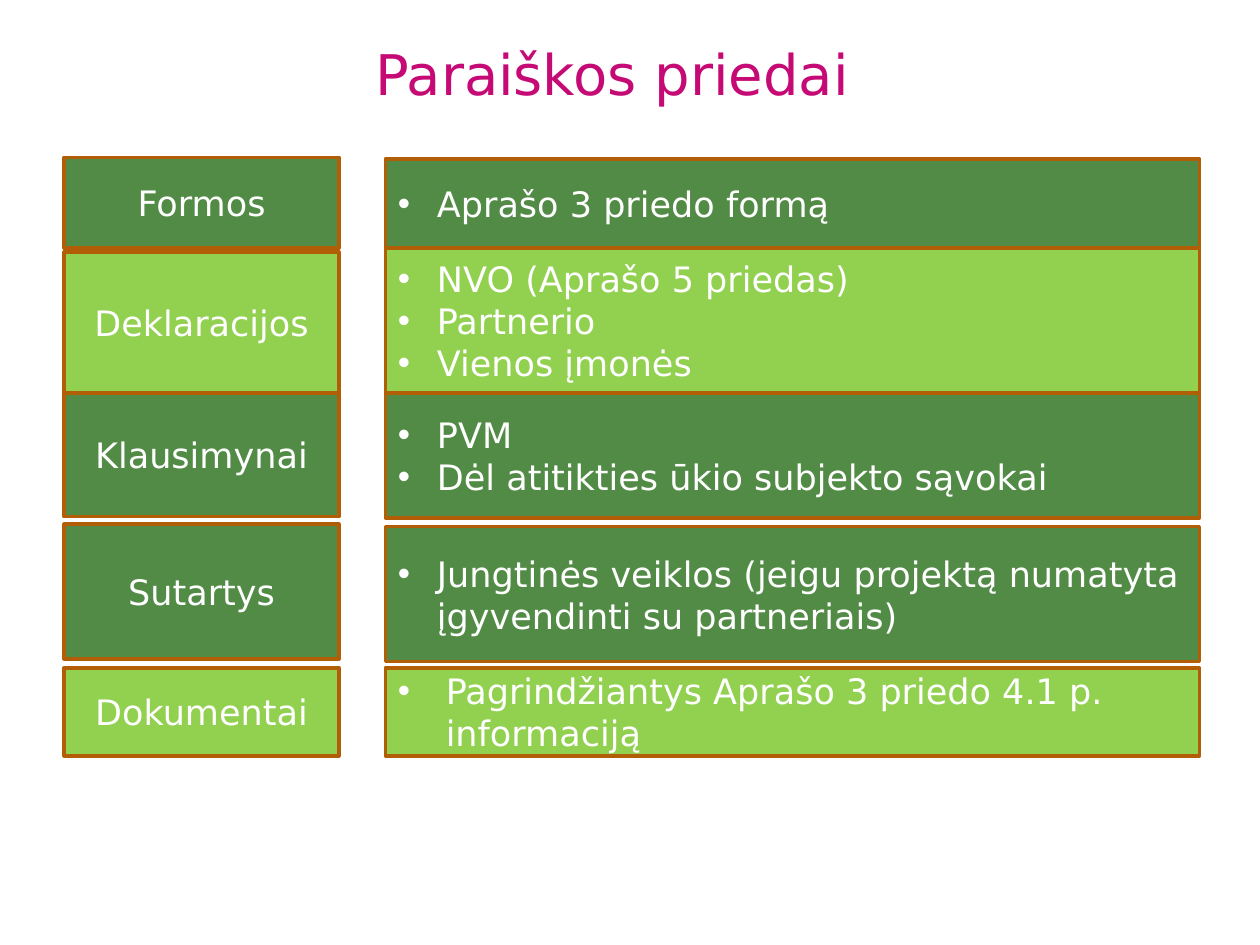
"""Build the slide listing the annexes of an application."""
from dataclasses import dataclass

from lxml.etree import SubElement
from pptx import Presentation
from pptx.dml.color import RGBColor
from pptx.enum.shapes import MSO_SHAPE as Preset
from pptx.enum.text import MSO_ANCHOR as Anchor, MSO_AUTO_SIZE as AutoSize, PP_ALIGN as Align
from pptx.oxml.ns import qn
from pptx.util import Inches, Pt

FONT = "DejaVu Sans"
COLORS = {
    "title": "C60A75",
    "dark": "528B45",
    "light": "92D050",
    "border": "B25E07",
    "text": "FFFFFF",
}
WIDTH, HEIGHT = Inches(10), Inches(7.5)
COLUMNS, ROWS = 100, 75


@dataclass(frozen=True)
class Span:
    """A start and a size in grid units."""
    start: float
    size: float


@dataclass(frozen=True)
class Annex:
    """A labelled group of annexes with the rows of its two boxes."""
    label: str
    items: tuple[str, ...]
    color: str
    label_rows: Span
    item_rows: Span
    indent: float = 0.31


LABEL_COLUMNS = Span(5.1, 21.8)
ITEM_COLUMNS = Span(30.6, 64.6)
TITLE_COLUMNS, TITLE_ROWS = Span(3.5, 90.2), Span(2.2, 9.2)

ANNEXES = (
    Annex("Formos", ("Aprašo 3 priedo formą",), "dark",
          Span(12.5, 7.2), Span(12.6, 7.1)),
    Annex("Deklaracijos", ("NVO (Aprašo 5 priedas)", "Partnerio", "Vienos įmonės"), "light",
          Span(20, 11.2), Span(19.7, 11.5)),
    Annex("Klausimynai", ("PVM", "Dėl atitikties ūkio subjekto sąvokai"), "dark",
          Span(31.2, 9.8), Span(31.2, 9.9)),
    Annex("Sutartys", ("Jungtinės veiklos (jeigu projektą numatyta įgyvendinti su partneriais)",),
          "dark", Span(41.6, 10.7), Span(41.8, 10.7)),
    Annex("Dokumentai", ("Pagrindžiantys Aprašo 3 priedo 4.1 p. informaciją",), "light",
          Span(53, 7), Span(53, 7), indent=0.38),
)


def grid_box(columns: Span, rows: Span) -> tuple[int, int, int, int]:
    """Return left, top, width and height of a grid area."""
    return (
        round(WIDTH * columns.start / COLUMNS),
        round(HEIGHT * rows.start / ROWS),
        round(WIDTH * columns.size / COLUMNS),
        round(HEIGHT * rows.size / ROWS),
    )


def rgb(name: str) -> RGBColor:
    """Return a named colour."""
    return RGBColor.from_string(COLORS[name])


def format_text(paragraph, size: float, color: str, align: Align) -> None:
    """Set alignment of a paragraph and the font of its runs."""
    paragraph.alignment = align
    for run in paragraph.runs:
        run.font.name = FONT
        run.font.size = Pt(size)
        run.font.color.rgb = rgb(color)


def add_bullet(paragraph, indent: float) -> None:
    """Give a paragraph a round bullet with a hanging indent."""
    properties = paragraph._p.get_or_add_pPr()
    properties.set("marL", str(Inches(indent)))
    properties.set("indent", str(-Inches(indent)))
    SubElement(properties, qn("a:buFont"), typeface="Arial")
    SubElement(properties, qn("a:buChar"), char="•")


def add_box(slide, columns: Span, rows: Span, color: str, text: str, align: Align):
    """Draw a bordered box with text and return its text frame."""
    shape = slide.shapes.add_shape(Preset.RECTANGLE, *grid_box(columns, rows))
    shape.shadow.inherit = False
    shape.fill.solid()
    shape.fill.fore_color.rgb = rgb(color)
    shape.line.color.rgb = rgb("border")
    shape.line.width = Pt(2)
    text_frame = shape.text_frame
    text_frame.word_wrap = True
    text_frame.vertical_anchor = Anchor.MIDDLE
    text_frame.text = text
    for paragraph in text_frame.paragraphs:
        format_text(paragraph, 20, "text", align)
    return text_frame


def add_annex(slide, annex: Annex) -> None:
    """Draw the label box and the list box of an annex."""
    add_box(slide, LABEL_COLUMNS, annex.label_rows, annex.color, annex.label, Align.CENTER)
    text_frame = add_box(slide, ITEM_COLUMNS, annex.item_rows, annex.color,
                         "\n".join(annex.items), Align.LEFT)
    for paragraph in text_frame.paragraphs:
        add_bullet(paragraph, annex.indent)


def set_title(slide, text: str) -> None:
    """Place and format the slide title."""
    title = slide.shapes.title
    title.left, title.top, title.width, title.height = grid_box(TITLE_COLUMNS, TITLE_ROWS)
    text_frame = title.text_frame
    text_frame.text = text
    text_frame.word_wrap = True
    text_frame.auto_size = AutoSize.NONE
    text_frame.vertical_anchor = Anchor.TOP
    text_frame.margin_top = Inches(0.09)
    format_text(text_frame.paragraphs[0], 32, "title", Align.CENTER)


def main() -> None:
    """Build and save the presentation."""
    presentation = Presentation()
    presentation.slide_width, presentation.slide_height = WIDTH, HEIGHT
    slide = presentation.slides.add_slide(presentation.slide_layouts.get_by_name("Title Only"))
    set_title(slide, "Paraiškos priedai")
    for annex in ANNEXES:
        add_annex(slide, annex)
    presentation.save("out.pptx")


if __name__ == "__main__":
    main()
